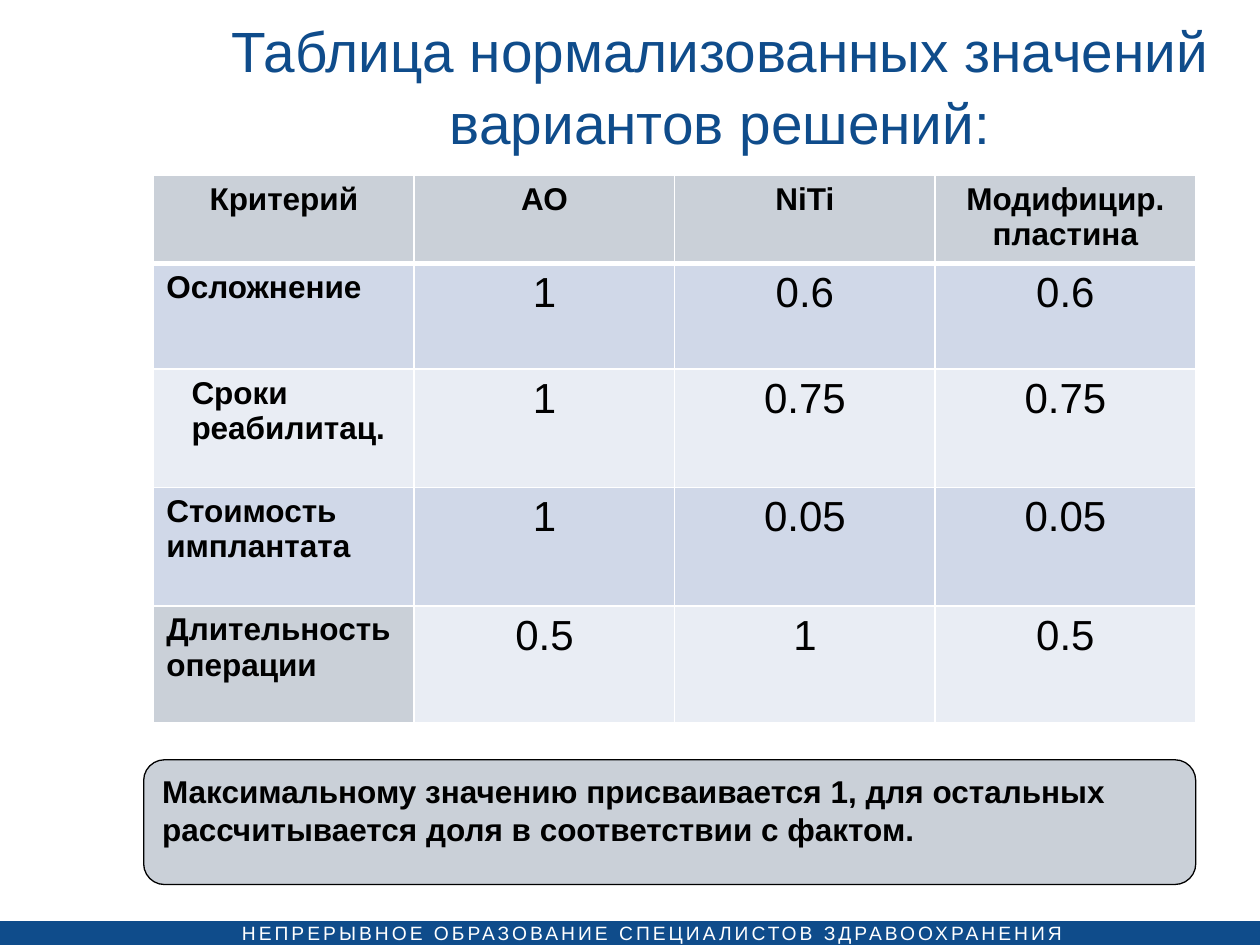
from lxml.etree import SubElement
from pptx import Presentation
from pptx.dml.color import RGBColor
from pptx.enum.shapes import MSO_SHAPE
from pptx.enum.text import MSO_ANCHOR, MSO_AUTO_SIZE, PP_ALIGN
from pptx.oxml.ns import qn
from pptx.util import Inches, Pt

BLUE = RGBColor(0x0F, 0x4C, 0x8B)
GREY = RGBColor(0xCA, 0xD0, 0xD8)
BAND_DARK = RGBColor(0xD0, 0xD8, 0xE8)
BAND_LIGHT = RGBColor(0xE9, 0xED, 0xF4)
WHITE = RGBColor(0xFF, 0xFF, 0xFF)
BLACK = RGBColor(0, 0, 0)

SLIDE_WIDTH, SLIDE_HEIGHT = 10, 7.5
COLUMN_WIDTH = 8.27 / 4
ROW_HEIGHTS = [0.7, 0.84, 0.94, 0.94, 0.93]
RIGHT_EDGE = 9.49

HEADERS = ["Критерий", "АО", "NiTi", "Модифицир. пластина"]
CRITERIA = [
    ("Осложнение", "1", "0.6", "0.6"),
    ("Сроки реабилитац.", "1", "0.75", "0.75"),
    ("Стоимость имплантата", "1", "0.05", "0.05"),
    ("Длительность операции", "0.5", "1", "0.5"),
]


def box(left, top, width, height):
    return [Inches(length) for length in (left, top, width, height)]


def add_run(paragraph, text, size, color=BLACK, bold=False):
    run = paragraph.add_run()
    run.text = text
    font = run.font
    font.name, font.size, font.bold = "Arial", Pt(size), bold
    font.color.rgb = color
    return run


def fill_shape(shape, color):
    shape.shadow.inherit = False
    shape.fill.solid()
    shape.fill.fore_color.rgb = color


def add_footer(slide):
    bar = slide.shapes.add_shape(
        MSO_SHAPE.RECTANGLE, *box(0, 7.31, SLIDE_WIDTH, SLIDE_HEIGHT - 7.31))
    fill_shape(bar, BLUE)
    bar.line.fill.background()

    motto = slide.shapes.add_textbox(*box(1.92, 7.31, 6.63, 0.19))
    frame = motto.text_frame
    frame.word_wrap = True
    frame.margin_left = frame.margin_right = 0
    frame.margin_top = frame.margin_bottom = 0
    run = add_run(frame.paragraphs[0],
                  "НЕПРЕРЫВНОЕ ОБРАЗОВАНИЕ СПЕЦИАЛИСТОВ ЗДРАВООХРАНЕНИЯ",
                  11, WHITE)
    run.font._element.set("spc", "170")


def set_title(slide, text):
    title = slide.shapes.title
    title.left, title.top, title.width, title.height = box(1.69, 0.08, 8.05, 1.17)
    frame = title.text_frame
    frame.auto_size = MSO_AUTO_SIZE.NONE
    frame.vertical_anchor = MSO_ANCHOR.MIDDLE
    paragraph = frame.paragraphs[0]
    paragraph.alignment = PP_ALIGN.CENTER
    paragraph.line_spacing = 1.06
    add_run(paragraph, text, 32.4, BLUE)


def set_borders(cell, widths):
    """Draw white borders; widths maps a side (L, R, T, B) to points."""
    properties = cell._tc.get_or_add_tcPr()
    for index, (side, width) in enumerate(widths.items()):
        line = properties.makeelement(qn(f"a:ln{side}"), {"w": str(Pt(width))})
        fill = SubElement(line, qn("a:solidFill"))
        SubElement(fill, qn("a:srgbClr"), val=str(WHITE))
        properties.insert(index, line)


def cell_color(row, column):
    if row == 0 or (row == len(CRITERIA) and column == 0):
        return GREY
    return BAND_DARK if row % 2 else BAND_LIGHT


def fill_cell(cell, text, row, column):
    cell.fill.solid()
    cell.fill.fore_color.rgb = cell_color(row, column)
    set_borders(cell, {"L": 1, "R": 1,
                       "T": 3 if row == 1 else 1,
                       "B": 3 if row == 0 else 1})
    is_label = row == 0 or column == 0
    paragraph = cell.text_frame.paragraphs[0]
    paragraph.alignment = PP_ALIGN.LEFT if row and column == 0 else PP_ALIGN.CENTER
    add_run(paragraph, text, 18 if is_label else 24, bold=is_label)


def add_criteria_table(slide):
    rows = [HEADERS, *CRITERIA]
    table = slide.shapes.add_table(
        len(rows), len(HEADERS),
        *box(1.22, 1.39, COLUMN_WIDTH * len(HEADERS), sum(ROW_HEIGHTS))).table
    table.horz_banding = False
    for column in table.columns:
        column.width = Inches(COLUMN_WIDTH)
    for row, (height, texts) in enumerate(zip(ROW_HEIGHTS, rows)):
        table.rows[row].height = Inches(height)
        for column, text in enumerate(texts):
            fill_cell(table.cell(row, column), text, row, column)

    rehabilitation = table.cell(2, 0).text_frame.paragraphs[0]
    rehabilitation.alignment = PP_ALIGN.JUSTIFY
    rehabilitation._p.get_or_add_pPr().set("marL", str(Inches(0.2)))


def add_note(slide, text):
    note = slide.shapes.add_shape(
        MSO_SHAPE.ROUNDED_RECTANGLE, *box(1.14, 6.03, RIGHT_EDGE - 1.14, 0.99))
    fill_shape(note, GREY)
    note.line.color.rgb = BLACK
    note.line.width = Pt(0.75)
    frame = note.text_frame
    frame.word_wrap = True
    frame.vertical_anchor = MSO_ANCHOR.TOP
    paragraph = frame.paragraphs[0]
    paragraph.alignment = PP_ALIGN.LEFT
    add_run(paragraph, text, 18, bold=True)


def main():
    presentation = Presentation()
    presentation.slide_width = Inches(SLIDE_WIDTH)
    presentation.slide_height = Inches(SLIDE_HEIGHT)
    slide = presentation.slides.add_slide(presentation.slide_layouts[5])
    add_footer(slide)
    set_title(slide, "Таблица нормализованных значений вариантов решений:")
    add_criteria_table(slide)
    add_note(slide, "Максимальному значению присваивается 1, для остальных "
                    "рассчитывается доля в соответствии с фактом.")
    presentation.save("out.pptx")


if __name__ == "__main__":
    main()
